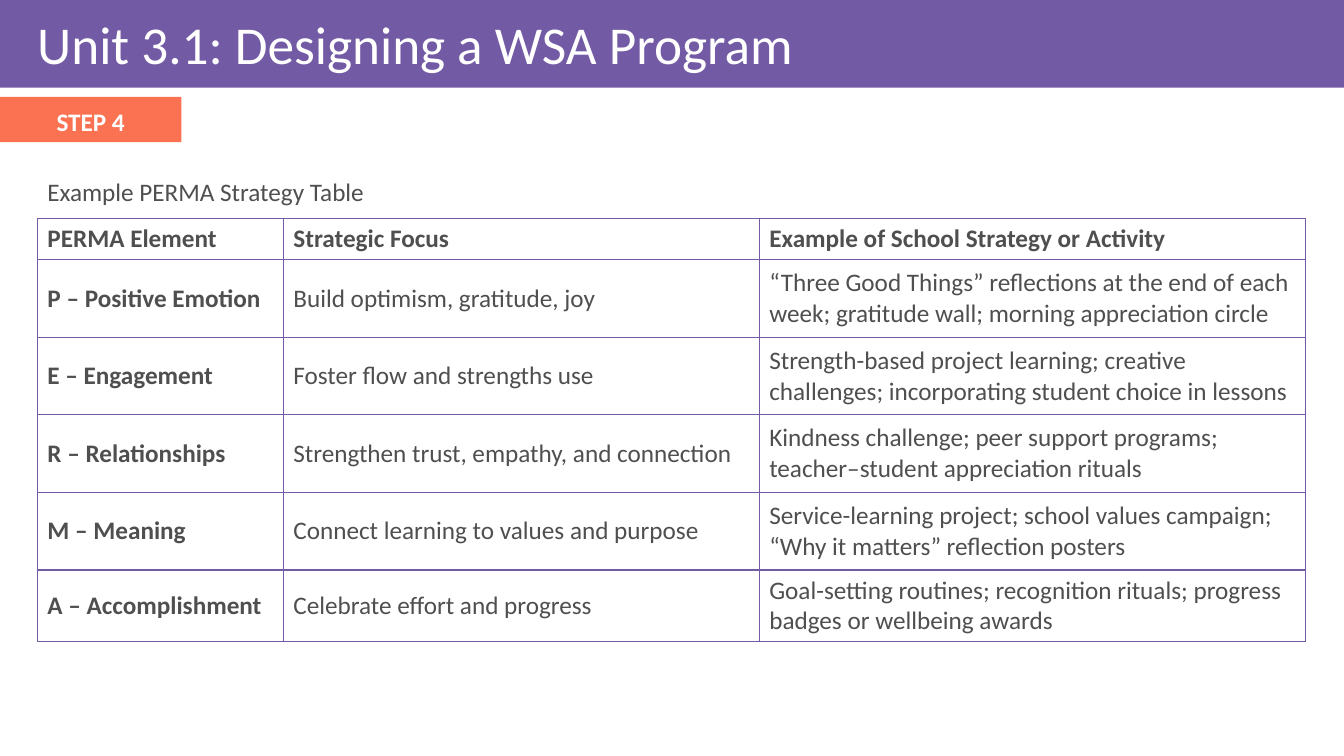
import dataclasses
import typing

import lxml.etree
import pptx
import pptx.dml.color
import pptx.enum.shapes
import pptx.enum.text
import pptx.oxml.ns
import pptx.util

PURPLE = pptx.dml.color.RGBColor(0x73, 0x5A, 0xA5)
ORANGE = pptx.dml.color.RGBColor(0xFA, 0x72, 0x52)
GREY = pptx.dml.color.RGBColor(0x4F, 0x4F, 0x50)
WHITE = pptx.dml.color.RGBColor(0xFF, 0xFF, 0xFF)

SLIDE_WIDTH = pptx.util.Inches(13.33)
SLIDE_HEIGHT = pptx.util.Inches(7.5)
FONT_NAME = "Calibri"
MIDDLE = pptx.enum.text.MSO_ANCHOR.MIDDLE
TOP = pptx.enum.text.MSO_ANCHOR.TOP
GROW = pptx.enum.text.MSO_AUTO_SIZE.SHAPE_TO_FIT_TEXT
FIXED = pptx.enum.text.MSO_AUTO_SIZE.NONE
Format = dict[str, typing.Any]


@dataclasses.dataclass(frozen=True)
class Area:
    """Left, top, width and height in percent of the slide."""

    left: float
    top: float
    width: float
    height: float

    def lengths(self) -> tuple[int, int, int, int]:
        return across(self.left), down(self.top), across(self.width), down(self.height)


@dataclasses.dataclass(frozen=True)
class Band:
    area: Area
    color: pptx.dml.color.RGBColor


@dataclasses.dataclass(frozen=True)
class Label:
    text: str
    area: Area
    size: int
    color: pptx.dml.color.RGBColor
    bold: bool
    frame_format: Format
    para_format: Format


BANDS = [
    Band(Area(0, 0, 100, 11.6), PURPLE),
    Band(Area(0, 12.8, 13.5, 6), ORANGE),
]

LABELS = [
    Label(
        "Unit 3.1: Designing a WSA Program",
        Area(2.03, 1.07, 97.97, 10.4), 38, WHITE, False,
        {
            "word_wrap": True,
            "auto_size": FIXED,
            "vertical_anchor": MIDDLE,
            "margin_left": pptx.util.Inches(0.1),
            "margin_right": pptx.util.Inches(0.06),
            "margin_top": pptx.util.Inches(0.06),
            "margin_bottom": pptx.util.Inches(0.06),
        },
        {"line_spacing": 0.9},
    ),
    Label(
        "STEP 4",
        Area(3.9, 15.33, 5.7, 2.8), 18, WHITE, True,
        {
            "word_wrap": False,
            "auto_size": GROW,
            "vertical_anchor": TOP,
            "margin_left": 0,
            "margin_right": 0,
            "margin_top": 0,
            "margin_bottom": 0,
        },
        {
            "alignment": pptx.enum.text.PP_ALIGN.CENTER,
            "line_spacing": pptx.util.Pt(14.4),
        },
    ),
    Label(
        "Example PERMA Strategy Table",
        Area(2.78, 22.67, 50.04, 5.33), 18, GREY, False,
        {"word_wrap": True, "auto_size": GROW, "vertical_anchor": TOP},
        {},
    ),
]

TABLE_LEFT, TABLE_TOP = 2.78, 28.93
COLUMN_WIDTHS = [18.3, 35.41, 40.66]
ROW_HEIGHTS = [4.27] + [10.27] * 4 + [7.33]
STRATEGIES = [
    ("PERMA Element", "Strategic Focus", "Example of School Strategy or Activity"),
    (
        "P – Positive Emotion",
        "Build optimism, gratitude, joy",
        "“Three Good Things” reflections at the end of each week; "
        "gratitude wall; morning appreciation circle",
    ),
    (
        "E – Engagement",
        "Foster flow and strengths use",
        "Strength-based project learning; creative challenges; "
        "incorporating student choice in lessons",
    ),
    (
        "R – Relationships",
        "Strengthen trust, empathy, and connection",
        "Kindness challenge; peer support programs; "
        "teacher–student appreciation rituals",
    ),
    (
        "M – Meaning",
        "Connect learning to values and purpose",
        "Service-learning project; school values campaign; "
        "“Why it matters” reflection posters",
    ),
    (
        "A – Accomplishment",
        "Celebrate effort and progress",
        "Goal-setting routines; recognition rituals; "
        "progress badges or wellbeing awards",
    ),
]


def across(percent: float) -> int:
    return round(SLIDE_WIDTH * percent / 100)


def down(percent: float) -> int:
    return round(SLIDE_HEIGHT * percent / 100)


def apply_format(target: typing.Any, values: Format) -> None:
    for name, value in values.items():
        setattr(target, name, value)


def write(frame: typing.Any, text: str, size: int,
          color: pptx.dml.color.RGBColor, bold: bool) -> typing.Any:
    para = frame.paragraphs[0]
    span = para.add_run()
    span.text = text
    apply_format(span.font, {"name": FONT_NAME, "size": pptx.util.Pt(size), "bold": bold})
    span.font.color.rgb = color
    return para


def draw_band(page: typing.Any, band: Band) -> None:
    box = page.shapes.add_shape(
        pptx.enum.shapes.MSO_SHAPE.RECTANGLE, *band.area.lengths())
    box.shadow.inherit = False
    box.fill.solid()
    box.fill.fore_color.rgb = band.color
    box.line.fill.background()


def draw_label(page: typing.Any, label: Label) -> None:
    frame = page.shapes.add_textbox(*label.area.lengths()).text_frame
    apply_format(frame, label.frame_format)
    para = write(frame, label.text, label.size, label.color, label.bold)
    apply_format(para, label.para_format)


def draw_borders(cell: typing.Any) -> None:
    qualified = pptx.oxml.ns.qn
    properties = cell._tc.get_or_add_tcPr()
    for position, side in enumerate(("lnL", "lnR", "lnT", "lnB")):
        border = lxml.etree.Element(qualified(f"a:{side}"), w=str(pptx.util.Pt(1)))
        fill = lxml.etree.SubElement(border, qualified("a:solidFill"))
        lxml.etree.SubElement(fill, qualified("a:srgbClr"), val=str(PURPLE))
        properties.insert(position, border)


def draw_table(page: typing.Any) -> None:
    area = Area(TABLE_LEFT, TABLE_TOP, sum(COLUMN_WIDTHS), sum(ROW_HEIGHTS))
    table = page.shapes.add_table(
        len(ROW_HEIGHTS), len(COLUMN_WIDTHS), *area.lengths()).table
    apply_format(table, {"first_row": False, "horz_banding": False})
    for column, width in zip(table.columns, COLUMN_WIDTHS):
        column.width = across(width)
    for row, height in zip(table.rows, ROW_HEIGHTS):
        row.height = down(height)
    for row_index, texts in enumerate(STRATEGIES):
        for column_index, text in enumerate(texts):
            cell = table.cell(row_index, column_index)
            cell.vertical_anchor = MIDDLE
            cell.fill.solid()
            cell.fill.fore_color.rgb = WHITE
            draw_borders(cell)
            write(cell.text_frame, text, 18, GREY, row_index == 0 or column_index == 0)


def main() -> None:
    deck = pptx.Presentation()
    apply_format(deck, {"slide_width": SLIDE_WIDTH, "slide_height": SLIDE_HEIGHT})
    page = deck.slides.add_slide(deck.slide_layouts[6])
    for band in BANDS:
        draw_band(page, band)
    draw_table(page)
    for label in LABELS:
        draw_label(page, label)
    deck.save("out.pptx")


if __name__ == "__main__":
    main()
